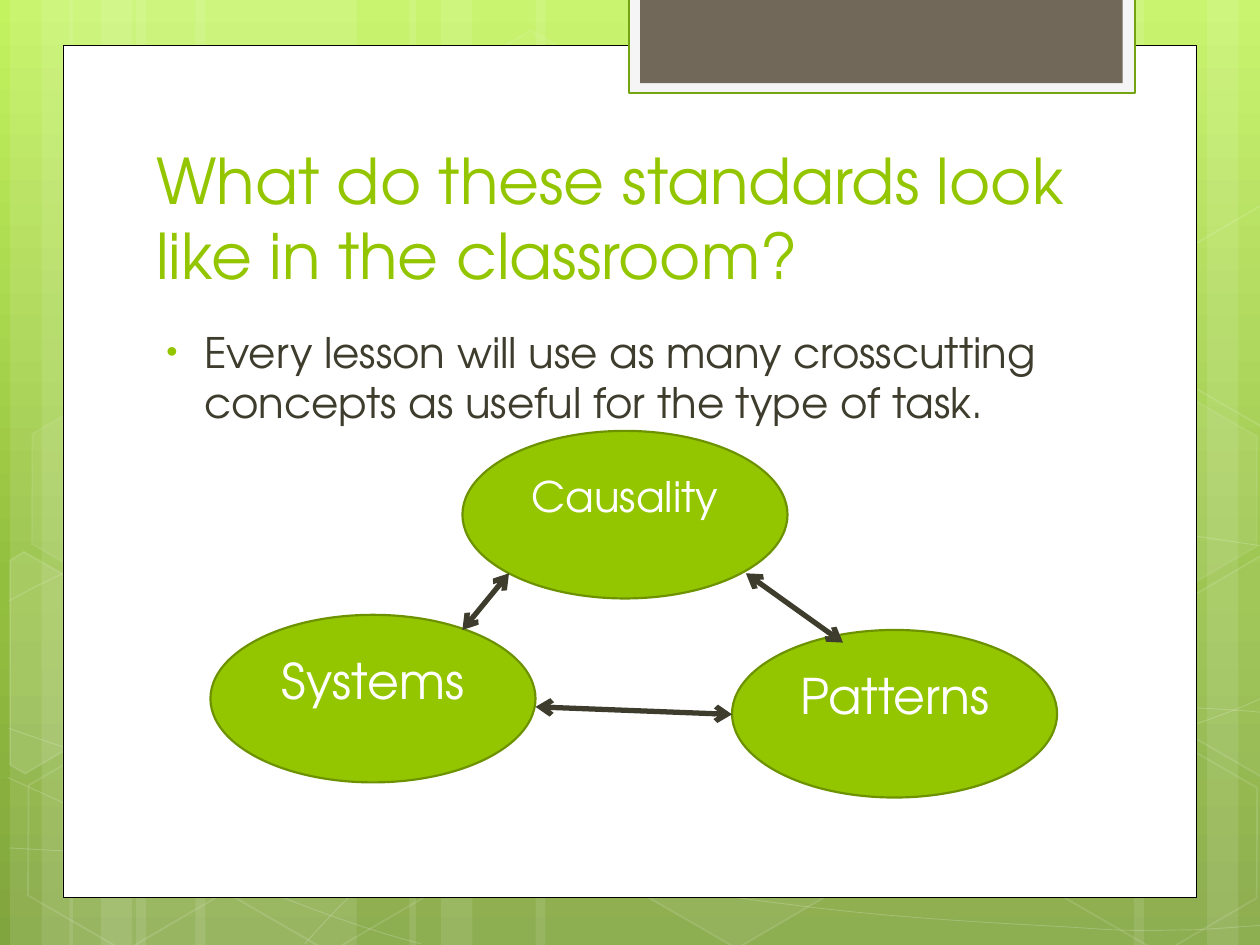
from dataclasses import dataclass
from copy import deepcopy
from typing import NamedTuple, Optional

from lxml.etree import SubElement
from pptx import Presentation
from pptx.dml.color import RGBColor
from pptx.enum.shapes import MSO_CONNECTOR, MSO_SHAPE
from pptx.enum.text import MSO_ANCHOR, MSO_AUTO_SIZE, PP_ALIGN
from pptx.oxml.ns import qn
from pptx.util import Inches, Pt


@dataclass(frozen=True)
class Theme:
    """Colours, font and type sizes of the slide."""
    font: str = "TeX Gyre Adventor"
    white: str = "FFFFFF"
    black: str = "000000"
    green: str = "94C600"
    oval_edge: str = "6D9200"
    tab_edge: str = "74A510"
    tab_frame: str = "F5F5F5"
    tab: str = "71685A"
    ink: str = "3E3D2D"
    backdrop: tuple = ((0, "C3F35F"), (0.62, "93BF3F"), (1, "81A53E"))
    title_size: int = 36
    body_size: int = 24
    concept_size: int = 28


THEME = Theme()


class Paint(NamedTuple):
    """Fill and outline, with opacities in percent."""
    fill: Optional[str] = None
    fill_opacity: int = 100
    line: Optional[str] = None
    width: float = 1
    line_opacity: int = 100


class Concept(NamedTuple):
    """A labelled oval."""
    label: str
    left: float
    top: float
    size: int = THEME.concept_size


def glass(opacity: int, line_opacity: int = 12) -> Paint:
    """Return the paint of a translucent hexagon."""
    return Paint(THEME.white if opacity else None, opacity, THEME.white, 1, line_opacity)


BARS = [(1.08, 1.75), (0.08, 0.5), (0.33, 0.83), (1.55, 1.75), (0.55, 0.5), (0.8, 0.83),
        (7.33, 1.75), (9.58, 0.5), (9, 0.83), (4.25, 3.08), (3.25, 0.5), (3.5, 0.83)]
WAVES = [
    [(0.07, 6.73), (0.61, 6.76), (1.15, 6.79), (1.9, 6.78), (2.65, 6.77), (3.58, 6.75),
     (4.58, 6.65), (5.58, 6.55), (7, 6.36), (7.92, 6.17), (8.83, 5.98), (9.77, 5.68),
     (10.07, 5.51)],
    [(0.07, 4.77), (0.36, 4.61), (0.65, 4.46), (1.21, 4.31), (1.78, 4.16), (2.59, 3.94),
     (3.47, 3.87), (4.36, 3.8), (5.44, 3.79), (6.54, 3.87), (7.64, 3.95), (9.47, 4.26),
     (10.07, 4.34)],
    [(0.06, 6.17), (1.27, 6.72), (2.47, 7.27), (3.34, 7.49)],
    [(0.07, 5.78), (0.38, 5.89), (0.7, 6), (1.28, 6.16), (1.86, 6.31), (2.73, 6.56),
     (3.57, 6.73), (4.4, 6.9), (5.45, 7.08), (6.28, 7.18), (7.11, 7.29), (8, 7.33),
     (8.53, 7.36), (9.05, 7.4), (9.19, 7.38), (9.45, 7.38), (9.71, 7.37), (9.89, 7.35),
     (10.07, 7.34)],
    [(2.42, 7.49), (2.6, 7.29), (2.78, 7.09), (3.02, 6.91), (3.26, 6.73), (3.6, 6.53),
     (3.88, 6.39), (4.16, 6.25), (4.33, 6.19), (4.7, 6.09), (5.06, 5.99), (5.73, 5.85),
     (6.08, 5.78), (6.44, 5.71), (6.49, 5.71), (6.8, 5.69), (7.11, 5.66), (7.6, 5.63),
     (7.94, 5.62), (8.29, 5.61), (8.86, 5.62), (8.86, 5.62), (8.86, 5.62), (9.53, 5.62),
     (9.53, 5.62), (9.71, 5.63), (9.88, 5.64), (9.97, 5.65), (10.06, 5.66), (10.03, 5.65),
     (10.06, 5.66)],
]
HEXAGONS = [(3.34, 0.36, glass(4, 8)), (4.97, 5.89, glass(6)), (0.11, 5.91, glass(0)),
            (0.14, 3.12, glass(7, 8)), (1.74, 5.92, glass(0)), (7.53, 4.53, glass(10)),
            (8.34, 5.93, glass(0)), (8.34, 3.14, glass(7, 8))]
CUT_HEXAGONS = [
    ([(0.08, 4.45), (0.19, 4.38), (0.96, 4.82), (0.95, 5.7), (0.2, 6.14), (0.08, 6.07)], glass(10)),
    ([(9.26, 4.85), (10.01, 4.41), (10.09, 4.46), (10.09, 6.13), (10.02, 6.17), (9.26, 5.73)],
     glass(4)),
    ([(9.26, 2.07), (10.01, 1.63), (10.1, 1.68), (10.09, 3.35), (10.02, 3.39), (9.26, 2.95)],
     glass(0))]
PANELS = [((0.5, 0.36, 9, 6.76), Paint(THEME.white, line=THEME.black, width=0.5)),
          ((4.99, -0.02, 4.02, 0.76), Paint(THEME.tab_frame, line=THEME.tab_edge, width=1.25)),
          ((5.08, -0.02, 3.83, 0.68), Paint(THEME.tab))]
CONCEPTS = [Concept("Systems", 1.67, 4.88), Concept("Patterns", 5.81, 5),
            Concept("Causality", 3.67, 3.42, THEME.body_size)]
LINKS = [(3.67, 5, 4.04, 4.55), (4.25, 5.61, 5.81, 5.67), (6.69, 5.1, 5.92, 4.55)]


def apply_paint(shape, paint: Paint) -> None:
    """Set the fill and outline of a shape and drop its shadow."""
    shape.shadow.inherit = False
    shape.fill.background()
    shape.line.fill.background()
    properties = shape.element.spPr
    for part, color, opacity, holder in (
            (shape.fill, paint.fill, paint.fill_opacity, properties),
            (shape.line.fill, paint.line, paint.line_opacity, properties.find(qn("a:ln")))):
        if color:
            part.solid()
            part.fore_color.rgb = RGBColor.from_string(color)
            if opacity < 100:
                tint = holder.find(f"{qn('a:solidFill')}/{qn('a:srgbClr')}")
                SubElement(tint, qn("a:alpha"), val=str(opacity * 1000))
    if paint.line:
        shape.line.width = Pt(paint.width)


def add_preset(shapes, preset: MSO_SHAPE, box: tuple, paint: Paint):
    """Add a painted preset shape."""
    shape = shapes.add_shape(preset, *map(Inches, box))
    apply_paint(shape, paint)
    return shape


def add_outline(shapes, points: list, paint: Paint, curved: bool) -> None:
    """Add a closed polygon, or an open chain of cubic curves."""
    first, *rest = [(Inches(x), Inches(y)) for x, y in points]
    builder = shapes.build_freeform(*first)
    builder.add_line_segments(rest, close=not curved)
    outline = builder.convert_to_shape()
    apply_paint(outline, paint)
    if curved:
        route = outline.element.find(f".//{qn('a:path')}")
        segments = route.findall(qn("a:lnTo"))
        for start in range(0, len(segments), 3):
            curve = SubElement(route, qn("a:cubicBezTo"))
            for segment in segments[start:start + 3]:
                curve.append(segment[0])
                route.remove(segment)


def draw_backdrop(slide) -> None:
    """Put the gradient on the slide and the decoration on its master."""
    fill = slide.background.fill
    fill.gradient()
    fill.gradient_angle = 270
    first_stop = slide.element.find(f".//{qn('a:gs')}")
    first_stop.addnext(deepcopy(first_stop))
    for stop, (position, color) in zip(fill.gradient_stops, THEME.backdrop):
        stop.position, stop.color.rgb = position, RGBColor.from_string(color)
    group = slide.shapes.add_group_shape()
    for left, width in BARS:
        add_preset(group.shapes, MSO_SHAPE.RECTANGLE, (left, 0, width, 7.5), Paint(THEME.white, 10))
    for wave in WAVES:
        add_outline(group.shapes, wave, Paint(None, 100, THEME.white, 0.5, 20), True)
    for left, top, paint in HEXAGONS:
        hexagon = add_preset(group.shapes, MSO_SHAPE.HEXAGON, (left, top, 1.75, 1.52), paint)
        hexagon.adjustments[0], hexagon.rotation = 0.285, 30
    for corners, paint in CUT_HEXAGONS:
        add_outline(group.shapes, corners, paint, False)
    panels = [add_preset(slide.shapes, MSO_SHAPE.RECTANGLE, *panel) for panel in PANELS]
    master_front = next(iter(slide.slide_layout.slide_master.shapes)).element
    for decoration in (group, *panels):
        for identity in decoration.element.iter(qn("p:cNvPr")):
            identity.set("id", str(int(identity.get("id")) + 100))
        master_front.addprevious(decoration.element)


def add_text(paragraph, text: str, size: int, color: str, align=PP_ALIGN.LEFT) -> None:
    """Add one formatted run."""
    paragraph.alignment = align
    run = paragraph.add_run()
    run.text = text
    run.font.name, run.font.size = THEME.font, Pt(size)
    run.font.color.rgb = RGBColor.from_string(color)


def place_holder(holder, box: tuple, anchor: MSO_ANCHOR):
    """Place a placeholder and return its paragraph."""
    holder.left, holder.top, holder.width, holder.height = map(Inches, box)
    frame = holder.text_frame
    frame.word_wrap, frame.auto_size, frame.vertical_anchor = True, MSO_AUTO_SIZE.NONE, anchor
    return frame.paragraphs[0]


def add_bullet(paragraph) -> None:
    """Give the paragraph a green hanging bullet."""
    properties = paragraph._p.get_or_add_pPr()
    properties.set("marL", str(Inches(0.38)))
    properties.set("indent", str(Inches(-0.3)))
    SubElement(SubElement(properties, qn("a:buClr")), qn("a:srgbClr"), val=THEME.green)
    SubElement(properties, qn("a:buSzPct"), val="76000")
    SubElement(properties, qn("a:buChar"), char="•")


def add_concept(shapes, concept: Concept) -> None:
    """Draw an oval with its label above the middle."""
    oval = add_preset(shapes, MSO_SHAPE.OVAL, (concept.left, concept.top, 2.58, 1.33),
                      Paint(THEME.green, line=THEME.oval_edge, width=1.25))
    frame = oval.text_frame
    frame.word_wrap, frame.vertical_anchor = True, MSO_ANCHOR.MIDDLE
    frame.margin_bottom = Inches(0.35)
    add_text(frame.paragraphs[0], concept.label, concept.size, THEME.white, PP_ALIGN.CENTER)


def add_link(shapes, ends: tuple) -> None:
    """Draw a two-headed arrow."""
    arrow = shapes.add_connector(MSO_CONNECTOR.STRAIGHT, *map(Inches, ends))
    arrow.line.color.rgb, arrow.line.width = RGBColor.from_string(THEME.ink), Pt(3)
    properties = arrow.element.spPr
    for end in ("a:headEnd", "a:tailEnd"):
        SubElement(properties.find(qn("a:ln")), qn(end), type="arrow")
    SubElement(properties, qn("a:effectLst"))


def main() -> None:
    """Build and save the slide."""
    deck = Presentation()
    deck.slide_width, deck.slide_height = Inches(10), Inches(7.5)
    slide = deck.slides.add_slide(deck.slide_layouts[1])
    draw_backdrop(slide)
    title = place_holder(slide.shapes.title, (1.14, 1.12, 7.68, 1.25), MSO_ANCHOR.BOTTOM)
    add_text(title, "What do these standards look like in the classroom?",
             THEME.title_size, THEME.green)
    lesson = place_holder(slide.placeholders[1], (1.14, 2.54, 7.41, 3.84), MSO_ANCHOR.TOP)
    add_text(lesson, "Every lesson will use as many crosscutting concepts as useful "
             "for the type of task.", THEME.body_size, THEME.ink)
    add_bullet(lesson)
    for concept in CONCEPTS:
        add_concept(slide.shapes, concept)
    for link in LINKS:
        add_link(slide.shapes, link)
    deck.save("out.pptx")


if __name__ == "__main__":
    main()
